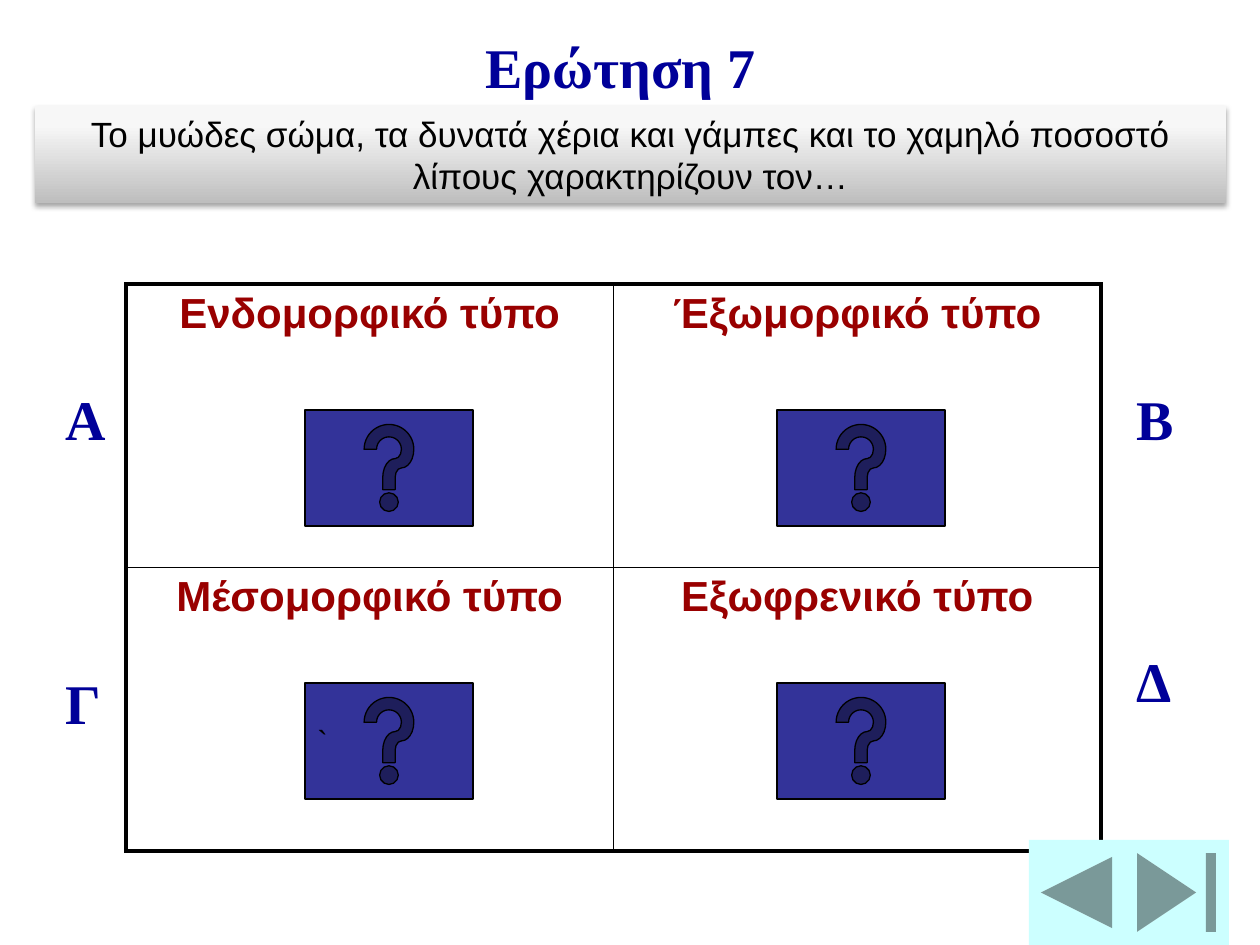
"""Build a quiz slide with four answers and navigation buttons."""
from pptx import Presentation
from pptx.dml.color import RGBColor
from pptx.enum.shapes import MSO_SHAPE
from pptx.enum.text import MSO_ANCHOR, MSO_AUTO_SIZE, PP_ALIGN
from pptx.oxml import parse_xml
from pptx.oxml.ns import nsdecls
from pptx.util import Emu, Pt

CENTER, LEFT = PP_ALIGN.CENTER, PP_ALIGN.LEFT
MIDDLE, TOP = MSO_ANCHOR.MIDDLE, MSO_ANCHOR.TOP
GROW = MSO_AUTO_SIZE.SHAPE_TO_FIT_TEXT
HELP = MSO_SHAPE.ACTION_BUTTON_HELP
END = MSO_SHAPE.ACTION_BUTTON_END
BACK = MSO_SHAPE.ACTION_BUTTON_BACK_OR_PREVIOUS
RECTANGLE = MSO_SHAPE.RECTANGLE
SCALE = 914400 / 126
COLORS = {"heading": "000099", "answer": "990000", "ink": "000000",
          "paper": "FFFFFF", "help": "333399", "navigation": "CCFFFF"}

QUESTION = ("Το μυώδες σώμα, τα δυνατά χέρια και γάμπες και το χαμηλό ποσοστό "
            "λίπους χαρακτηρίζουν τον…")
ANSWERS = [["Ενδομορφικό τύπο", "Έξωμορφικό τύπο"],
           ["Μέσομορφικό τύπο", "Εξωφρενικό τύπο"]]
GRID = (126, 284, 975, 567)
HEADINGS = [("Α", 53, 378, 63), ("Γ", 53, 662, 63), ("Β", 1124, 378, 63),
            ("Δ", 1124, 640, 63), ("Ερώτηση 7", 473, 26, 336)]
HELP_BUTTONS = [(305, 683, "`"), (777, 683, ""), (777, 410, ""), (305, 410, "")]
NAVIGATION = [(END, 1124, 105), (BACK, 1029, 95)]
BANNER_STOPS = [(0, "BEBEBE"), (80, "F7F7F7"), (100, "F8F8F8")]


def px(*lengths):
    return [Emu(round(length * SCALE)) for length in lengths]


def rgb(name):
    return RGBColor.from_string(COLORS[name])


def write(frame, text, size, font, color, bold=False, align=LEFT):
    paragraph = frame.paragraphs[0]
    paragraph.alignment = align
    run = paragraph.add_run()
    run.text = text
    run.font.size, run.font.name, run.font.bold = Pt(size), font, bold
    run.font.color.rgb = rgb(color)


def add_button(slide, preset, box, fill, outlined=False):
    button = slide.shapes.add_shape(preset, *px(*box))
    button.shadow.inherit = False
    button.fill.solid()
    button.fill.fore_color.rgb = rgb(fill)
    if outlined:
        button.line.color.rgb = rgb("ink")
        button.line.width = Pt(0.75)
    else:
        button.line.fill.background()
    return button


def add_borders(cell, widths):
    properties = cell._tc.get_or_add_tcPr()
    for index, (side, width) in enumerate(zip("LRTB", widths)):
        properties.insert(index, parse_xml(
            f'<a:ln{side} {nsdecls("a")} w="{Pt(width)}"><a:solidFill>'
            f'<a:srgbClr val="{COLORS["ink"]}"/></a:solidFill></a:ln{side}>'))


def add_answers(slide):
    table = slide.shapes.add_table(2, 2, *px(*GRID)).table
    table.first_row = table.horz_banding = False
    for index in range(2):
        table.columns[index].width, table.rows[index].height = px(GRID[2] / 2, GRID[3] / 2)
    for row, answers in enumerate(ANSWERS):
        for column, answer in enumerate(answers):
            cell = table.cell(row, column)
            cell.fill.solid()
            cell.fill.fore_color.rgb = rgb("paper")
            write(cell.text_frame, answer, 24, "Arial", "answer", True, CENTER)
            outer = (column == 0, column == 1, row == 0, row == 1)
            add_borders(cell, [2.25 if edge else 1 for edge in outer])


def add_banner(slide):
    banner = slide.shapes.add_shape(RECTANGLE, *px(35, 106, 1191, 97))
    banner.line.fill.background()
    stops = "".join(f'<a:gs pos="{position * 1000}"><a:srgbClr val="{color}"/></a:gs>'
                    for position, color in BANNER_STOPS)
    properties = banner._element.spPr
    properties.insert(2, parse_xml(
        f'<a:gradFill {nsdecls("a")} rotWithShape="1"><a:gsLst>{stops}</a:gsLst>'
        '<a:lin ang="16200000" scaled="0"/></a:gradFill>'))
    properties.append(parse_xml(
        f'<a:effectLst {nsdecls("a")}><a:outerShdw blurRad="{Pt(3.1)}" dist="{Pt(1.8)}" '
        f'dir="5400000" rotWithShape="0"><a:srgbClr val="{COLORS["ink"]}">'
        '<a:alpha val="35000"/></a:srgbClr></a:outerShdw></a:effectLst>'))
    frame = banner.text_frame
    frame.word_wrap, frame.auto_size, frame.vertical_anchor = True, GROW, TOP
    write(frame, QUESTION, 20, "Arial", "ink", align=CENTER)


def main():
    deck = Presentation()
    deck.slide_width, deck.slide_height = px(1260, 945)
    slide = deck.slides.add_slide(deck.slide_layouts[6])
    add_answers(slide)
    for heading, left, top, width in HEADINGS:
        frame = slide.shapes.add_textbox(*px(left, top, width, 80)).text_frame
        frame.word_wrap, frame.auto_size = True, GROW
        write(frame, heading, 32, "Times New Roman", "heading", True)
    for left, top, mark in HELP_BUTTONS:
        button = add_button(slide, HELP, (left, top, 168, 116), "help", True)
        if mark:
            frame = button.text_frame
            frame.word_wrap, frame.vertical_anchor = False, MIDDLE
            write(frame, mark, 18, "Arial", "ink")
    for preset, left, width in NAVIGATION:
        add_button(slide, preset, (left, 840, width, 105), "navigation")
    add_banner(slide)
    deck.save("out.pptx")


if __name__ == "__main__":
    main()
